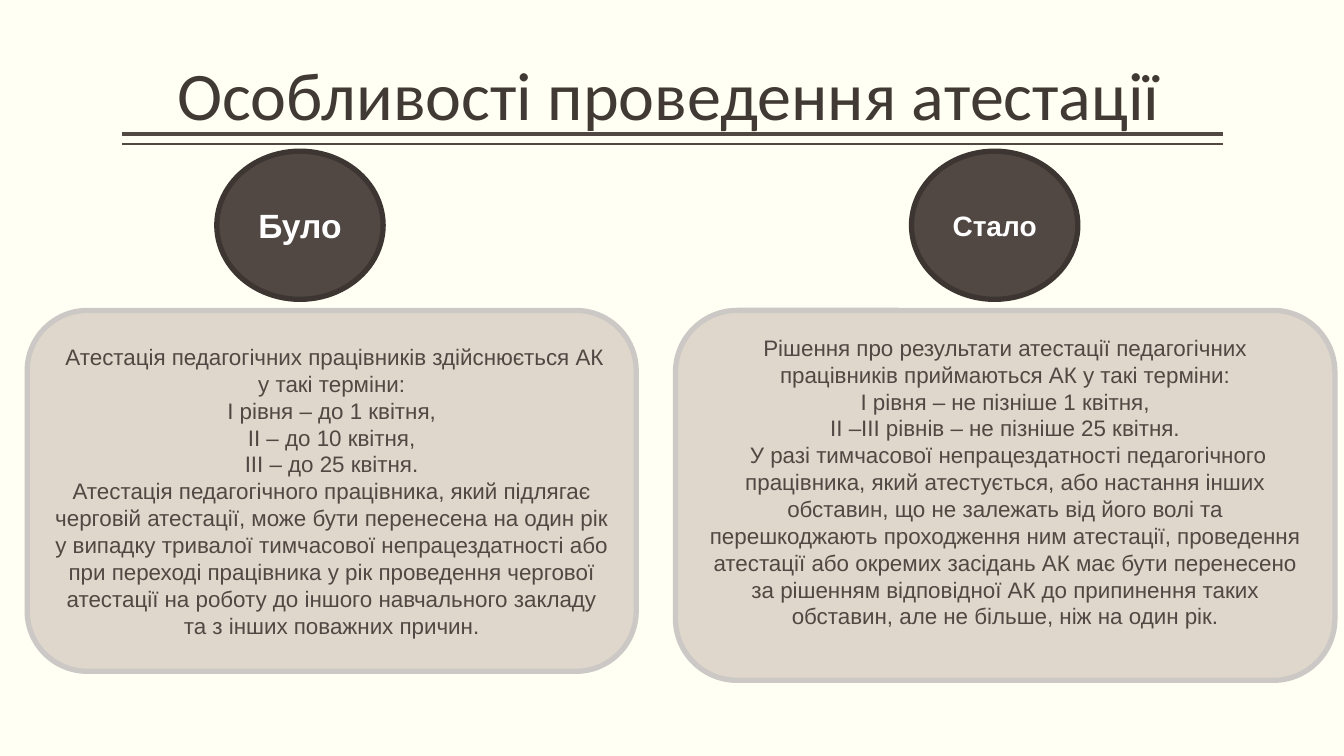
from lxml import etree
from pptx import Presentation
from pptx.dml.color import RGBColor
from pptx.enum import shapes, text
from pptx.oxml import ns
from pptx.util import Inches, Pt

CREAM = RGBColor(0xFF, 0xFF, 0xF3)
BROWN = RGBColor(0x51, 0x48, 0x43)
DARK_BROWN = RGBColor(0x3C, 0x35, 0x32)
TITLE_BROWN = RGBColor(0x41, 0x39, 0x33)
SAND = RGBColor(0xDF, 0xD7, 0xCB)
GREY = RGBColor(0xCB, 0xC8, 0xC5)
WHITE = RGBColor(0xFF, 0xFF, 0xFF)

BEFORE = [
    " Атестація педагогічних працівників здійснюється АК у такі терміни:",
    "I рівня – до 1 квітня,",
    "II – до 10 квітня,",
    "III – до 25 квітня.",
    "Атестація педагогічного працівника, який підлягає черговій атестації, "
    "може бути перенесена на один рік у випадку тривалої тимчасової "
    "непрацездатності або при переході працівника у рік проведення чергової "
    "атестації на роботу до іншого навчального закладу та з інших поважних причин.",
]
AFTER = [
    "Рішення про результати атестації педагогічних працівників приймаються "
    "АК у такі терміни:",
    "I рівня – не пізніше 1 квітня,",
    "II –III рівнів – не пізніше 25 квітня.",
    " У разі тимчасової непрацездатності педагогічного працівника, який "
    "атестується, або настання інших обставин, що не залежать від його волі та "
    "перешкоджають проходження ним атестації, проведення атестації або окремих "
    "засідань АК має бути перенесено за рішенням відповідної АК до припинення "
    "таких обставин, але не більше, ніж на один рік.",
]


def write(tf, lines, size, color, font="Arial", bold=False):
    """Fill a text frame with centred paragraphs."""
    tf.word_wrap = True
    for i, line in enumerate(lines):
        p = tf.paragraphs[0] if i == 0 else tf.add_paragraph()
        p.alignment = text.PP_ALIGN.CENTER
        r = p.add_run()
        r.text = line
        r.font.size = Pt(size)
        r.font.name = font
        r.font.bold = bold
        r.font.color.rgb = color


def add_rule(s, left, top, width, weight):
    """Draw a horizontal rule."""
    line = s.shapes.add_connector(
        shapes.MSO_CONNECTOR.STRAIGHT,
        Inches(left), Inches(top), Inches(left + width), Inches(top))
    line.line.color.rgb = BROWN
    line.line.width = Pt(weight)
    etree.SubElement(line._element.spPr, ns.qn("a:effectLst"))


def add_heading(s, left, top, width, height, title):
    """Place the title and the double rule across its foot."""
    sp = s.shapes.title
    sp.left, sp.top = Inches(left), Inches(top)
    sp.width, sp.height = Inches(width), Inches(height)
    tf = sp.text_frame
    tf.margin_left = tf.margin_right = 0
    tf.vertical_anchor = text.MSO_ANCHOR.BOTTOM
    tf.auto_size = text.MSO_AUTO_SIZE.NONE
    write(tf, [title], 48.6, TITLE_BROWN, "Calibri")
    tf.paragraphs[0].line_spacing = 0.9
    for offset, weight in ((0.98, 3), (1.08, 1)):
        add_rule(s, left + 0.37, top + offset, width - 0.66, weight)


def add_block(s, kind, box, fill, line):
    """Add a filled, outlined shape with middle-anchored text."""
    sp = s.shapes.add_shape(kind, *map(Inches, box))
    sp.shadow.inherit = False
    sp.fill.solid()
    sp.fill.fore_color.rgb = fill
    sp.line.color.rgb = line
    sp.line.width = Pt(3.78)
    sp.text_frame.vertical_anchor = text.MSO_ANCHOR.MIDDLE
    return sp


def add_column(s, left, top, width, height, label, label_size, label_offset,
               lines, bottom_inset):
    """Place a round label above a panel of text."""
    badge = add_block(s, shapes.MSO_SHAPE.OVAL,
                      (left + label_offset, top, 1.65, 1.47), BROWN, DARK_BROWN)
    write(badge.text_frame, [label], label_size, WHITE, bold=True)
    panel = add_block(s, shapes.MSO_SHAPE.ROUNDED_RECTANGLE,
                      (left, top + 1.58, width, height - 1.58), SAND, GREY)
    panel.text_frame.margin_bottom = Inches(bottom_inset)
    write(panel.text_frame, lines, 16, BROWN)


def main():
    """Build and save the slide."""
    prs = Presentation()
    prs.slide_width, prs.slide_height = Inches(13.33), Inches(7.5)
    s = prs.slides.add_slide(prs.slide_layouts[5])
    s.background.fill.solid()
    s.background.fill.fore_color.rgb = CREAM
    add_heading(s, 0.84, 0.35, 11.58, 1.04, "Особливості проведення атестації")
    add_column(s, 0.27, 1.5, 6.04, 5.16, "Було", 24, 1.88, BEFORE, 0.05)
    add_column(s, 6.7, 1.5, 6.54, 5.25, "Стало", 20, 2.34, AFTER, 0.32)
    prs.save("out.pptx")


if __name__ == "__main__":
    main()
